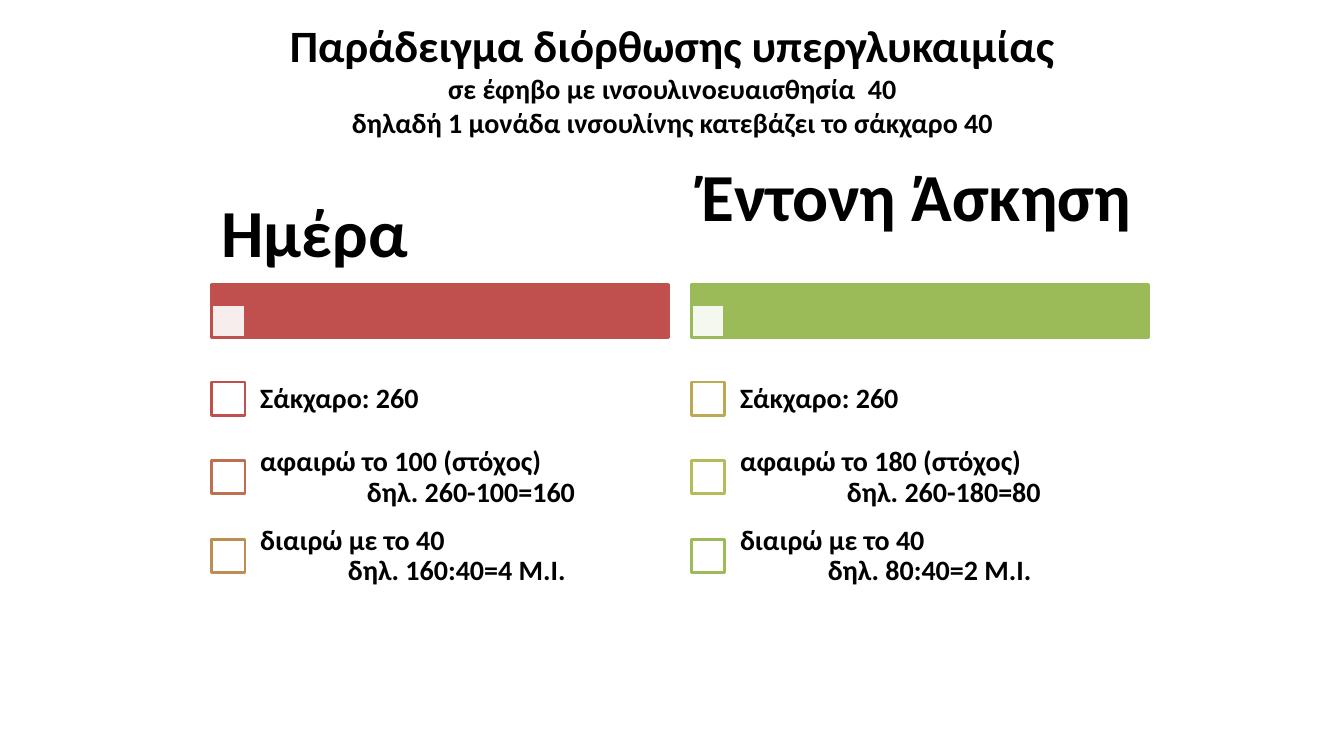
"""Build the slide that compares a daytime and an exercise insulin correction."""
from pptx import Presentation
from pptx.dml.color import RGBColor
from pptx.enum.shapes import MSO_SHAPE
from pptx.enum.text import MSO_ANCHOR, PP_ALIGN
from pptx.oxml.ns import qn
from pptx.util import Inches, Pt
from lxml import etree


def paint(color, hue):
    color.rgb = RGBColor.from_string(hue)


def write(place, lines, margins, **format):
    box = slide.shapes.add_textbox(*map(Inches, place))
    frame = box.text_frame
    frame.word_wrap = True
    frame.vertical_anchor = MSO_ANCHOR.MIDDLE
    for side, size in zip(("left", "top", "right", "bottom"), margins):
        setattr(frame, f"margin_{side}", Inches(size))
    for index, (text, size, indent) in enumerate(lines):
        para = frame.add_paragraph() if index else frame.paragraphs[0]
        for name, value in format.items():
            setattr(para, name, value)
        if indent:
            para._p.get_or_add_pPr().set("marL", str(Inches(indent)))
        run = para.add_run()
        run.text = text
        for name, value in {"name": "Calibri", "size": Pt(size), "bold": True}.items():
            setattr(run.font, name, value)
        paint(run.font.color, "000000")


deck = Presentation()
deck.slide_width = Inches(13.33)
deck.slide_height = Inches(7.5)
slide = deck.slides.add_slide(deck.slide_layouts[6])

title = [
    ("Παράδειγμα διόρθωσης υπεργλυκαιμίας", 32, 0),
    ("σε έφηβο με ινσουλινοευαισθησία  40", 20, 0),
    ("δηλαδή 1 μονάδα ινσουλίνης κατεβάζει το σάκχαρο 40", 20, 0),
]
write((1.67, 0.3, 10, 1.25), title, (0.1, 0.05, 0.1, 0.34), alignment=PP_ALIGN.CENTER)

columns = [
    (2.1, "Ημέρα", 0.07, "C0504D", ["C0504D", "BF6F4F", "BE8D52"],
     "100", "260-100=160", "160:40=4"),
    (6.86, "Έντονη Άσκηση", 0.79, "9BBB59", ["BDA954", "B5BC57", "9BBB59"],
     "180", "260-180=80", "80:40=2"),
]
for left, head, base, hue, edges, goal, minus, ratio in columns:
    rects = [((2.82, 4.53, 0.53), hue, hue), ((3.02, 0.33, 0.33), "FFFFFF", hue)]
    rects += [((3.79 + 0.78 * row, 0.33, 0.33), "FFFFFF", edge)
              for row, edge in enumerate(edges)]
    shapes = []
    for place, fill, edge in rects:
        rect = slide.shapes.add_shape(MSO_SHAPE.RECTANGLE, *map(Inches, (left, *place)))
        rect.shadow.inherit = False
        rect.fill.solid()
        paint(rect.fill.fore_color, fill)
        paint(rect.line.color, edge)
        rect.line.width = Pt(2)
        shapes.append(rect)
    tint = next(shapes[1].fill._xPr.iter(qn("a:srgbClr")))
    etree.SubElement(tint, qn("a:alpha"), val="90000")

    write((left, 1.86, 4.53, 0.96), [(head, 48, 0)], (0.1, 0.07, 0.1, base),
          line_spacing=0.9)
    steps = [
        [("Σάκχαρο: 260", 20, 0)],
        [(f"αφαιρώ το {goal} (στόχος)", 20, 0), (f"δηλ. {minus}", 20, 1.06)],
        [("διαιρώ με το 40", 20, 0), (f"δηλ. {ratio} Μ.Ι.", 20, 0.87)],
    ]
    for row, step in enumerate(steps):
        write((left + 0.32, 3.57 + 0.78 * row, 4.22, 0.78), step, [0.16] * 4,
              line_spacing=0.9)

deck.save("out.pptx")
